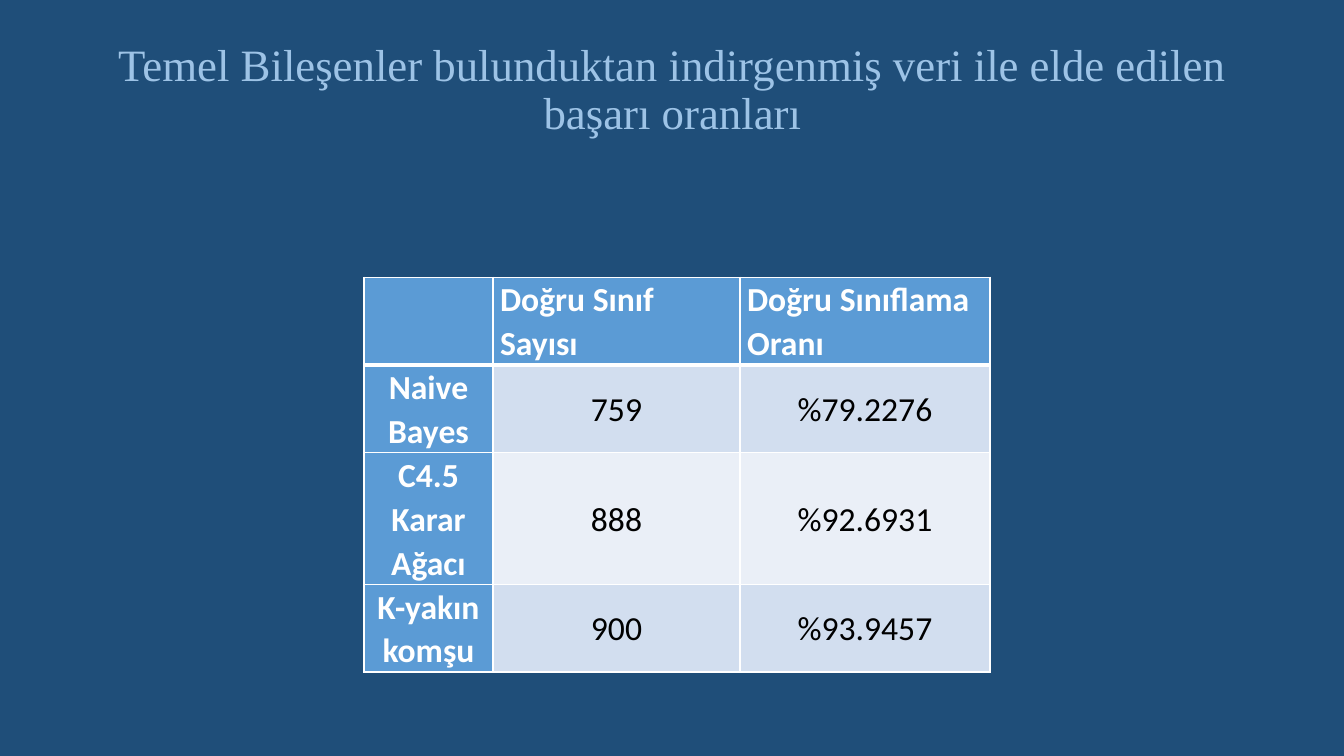
from lxml.etree import SubElement
from pptx import Presentation
from pptx.dml.color import RGBColor
from pptx.enum.text import MSO_ANCHOR, PP_ALIGN
from pptx.oxml.ns import qn
from pptx.util import Inches, Pt

BACKGROUND = "1F4E79"
TITLE_COLOUR = "9DC3E6"
HEADER_FILL = "5B9BD5"
BAND_FILLS = ("EAEFF7", "D2DEEF")
WHITE = "FFFFFF"
BLACK = "000000"

TITLE = "Temel Bileşenler bulunduktan indirgenmiş veri ile elde edilen başarı oranları"
RESULTS = [
    ("", "Doğru Sınıf Sayısı", "Doğru Sınıflama Oranı"),
    ("Naive Bayes", "759", "%79.2276"),
    ("C4.5 Karar Ağacı", "888", "%92.6931"),
    ("K-yakın komşu", "900", "%93.9457"),
]
COLUMN_WIDTHS = (1.28, 2.45, 2.48)
ROW_HEIGHTS = (0.68, 0.68, 0.73, 0.73)


def set_fill(fill, colour):
    """Make a fill solid in the given hex colour."""
    fill.solid()
    fill.fore_color.rgb = RGBColor.from_string(colour)


def format_text(paragraph, font_name, size, colour, bold, spacing):
    """Format a paragraph's line spacing and its runs."""
    paragraph.line_spacing = spacing
    for run in paragraph.runs:
        run.font.name = font_name
        run.font.size = Pt(size)
        run.font.bold = bold
        run.font.color.rgb = RGBColor.from_string(colour)


def set_borders(cell, top, bottom):
    """Draw white cell borders, with the top and bottom widths in points."""
    properties = cell._tc.get_or_add_tcPr()
    for side, width in (("L", 1), ("R", 1), ("T", top), ("B", bottom)):
        line = SubElement(properties, qn(f"a:ln{side}"), w=str(Pt(width)))
        solid = SubElement(line, qn("a:solidFill"))
        SubElement(solid, qn("a:srgbClr"), val=WHITE)


def add_title(slide, left, top, width, height):
    """Place the title placeholder in its box."""
    title = slide.shapes.title
    title.left, title.top = Inches(left), Inches(top)
    title.width, title.height = Inches(width), Inches(height)
    title.text_frame.text = TITLE
    title.text_frame.word_wrap = True
    title.text_frame.vertical_anchor = MSO_ANCHOR.MIDDLE
    paragraph = title.text_frame.paragraphs[0]
    paragraph.alignment = PP_ALIGN.CENTER
    format_text(paragraph, "Times New Roman", 32, TITLE_COLOUR, False, 0.9)


def format_cell(cell, row, column):
    """Style a cell by its place in the results table."""
    is_header = row == 0 or column == 0
    set_borders(cell, 3 if row == 1 else 1, 3 if row == 0 else 1)
    set_fill(cell.fill, HEADER_FILL if is_header else BAND_FILLS[row % 2])
    cell.margin_left = cell.margin_right = Inches(0.07)
    cell.margin_top = cell.margin_bottom = 0
    paragraph = cell.text_frame.paragraphs[0]
    if row > 0:
        cell.vertical_anchor = MSO_ANCHOR.MIDDLE
        paragraph.alignment = PP_ALIGN.CENTER
    colour = WHITE if is_header else BLACK
    format_text(paragraph, "Calibri", 24, colour, is_header, 1.07)


def add_results_table(slide, left, top, width, height):
    """Add the table of success rates in its box."""
    frame = slide.shapes.add_table(
        len(RESULTS), len(COLUMN_WIDTHS),
        Inches(left), Inches(top), Inches(width), Inches(height))
    table = frame.table
    table.first_col = True
    for column, column_width in zip(table.columns, COLUMN_WIDTHS):
        column.width = Inches(column_width)
    for row, row_height in zip(table.rows, ROW_HEIGHTS):
        row.height = Inches(row_height)
    for row, values in enumerate(RESULTS):
        for column, value in enumerate(values):
            cell = table.cell(row, column)
            cell.text_frame.text = value
            format_cell(cell, row, column)


def main():
    """Build and save the presentation."""
    presentation = Presentation()
    presentation.slide_width = Inches(13.33)
    presentation.slide_height = Inches(7.5)
    slide = presentation.slides.add_slide(presentation.slide_layouts[5])
    set_fill(slide.background.fill, BACKGROUND)
    add_title(slide, 0.92, 0.18, 11.5, 1.45)
    add_results_table(slide, 3.61, 2.75, sum(COLUMN_WIDTHS), sum(ROW_HEIGHTS))
    presentation.save("out.pptx")


if __name__ == "__main__":
    main()
